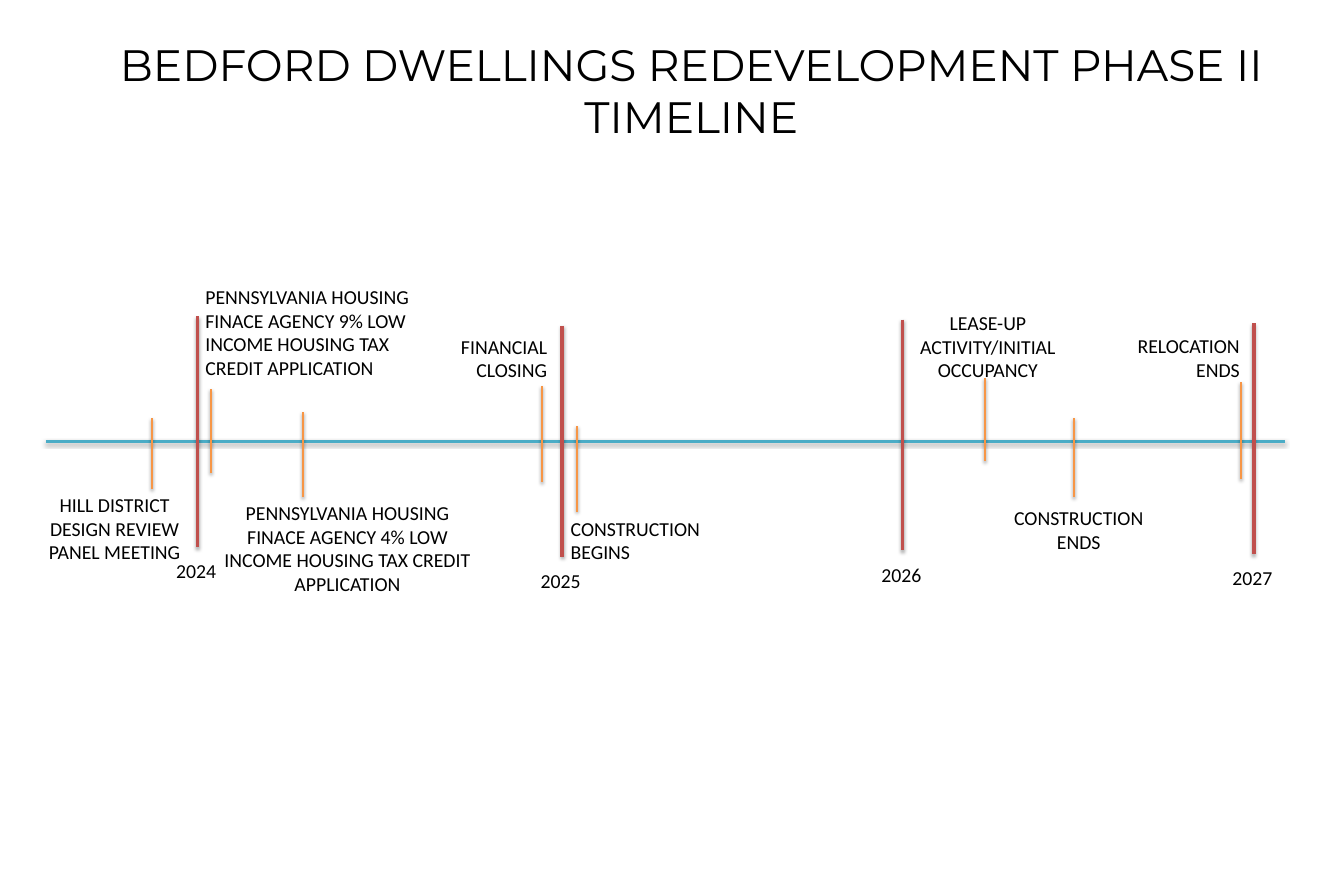
from lxml.etree import SubElement
from pptx import Presentation
from pptx.dml.color import RGBColor
from pptx.enum.shapes import MSO_CONNECTOR as Connector
from pptx.enum.text import MSO_ANCHOR as Anchor, MSO_AUTO_SIZE as AutoSize, PP_ALIGN as Align
from pptx.oxml.ns import qn
from pptx.util import Emu, Pt

PX = 9144
SLIDE_SIZE = (1700, 1100)
COLORS = {"axis": "4BACC6", "event": "F79646", "year": "C0504D",
          "text": "000000", "paper": "FFFFFF"}
LINE_STYLES = {
    "axis": {"width": 3, "opacity": 35, "distance": 1.8},
    "year": {"width": 3, "opacity": 35, "distance": 1.8},
    "event": {"width": 2, "opacity": 38, "distance": 1.6},
}
TITLE = "BEDFORD DWELLINGS REDEVELOPMENT PHASE II TIMELINE"
TITLE_BOX = (83, 42, 1583, 145)
AXIS = (58, 1625, 558)
YEAR_MARK_HEIGHT = 292
YEAR_LABEL_SIZE = (75, 40)
YEAR_LABEL_GAP = 10
YEARS = [("2024", 250, 400), ("2025", 711, 412), ("2026", 1142, 404), ("2027", 1586, 409)]
EVENTS = [
    ("HILL DISTRICT DESIGN REVIEW PANEL MEETING",
     (192, 529, 618), (50, 618, 190, 101), Align.CENTER),
    ("PENNSYLVANIA HOUSING FINACE AGENCY 9% LOW INCOME HOUSING TAX CREDIT APPLICATION",
     (267, 492, 598), (250, 355, 330, 131), Align.LEFT),
    ("PENNSYLVANIA HOUSING FINACE AGENCY 4% LOW INCOME HOUSING TAX CREDIT APPLICATION",
     (383, 521, 629), (265, 628, 349, 131), Align.CENTER),
    ("FINANCIAL CLOSING", (686, 488, 610), (524, 418, 178, 71), Align.RIGHT),
    ("CONSTRUCTION BEGINS", (730, 539, 647), (712, 648, 203, 71), Align.LEFT),
    ("LEASE-UP ACTIVITY/INITIAL OCCUPANCY",
     (1246, 478, 583), (1150, 388, 199, 101), Align.CENTER),
    ("CONSTRUCTION ENDS", (1358, 529, 629), (1271, 635, 187, 71), Align.CENTER),
    ("RELOCATION ENDS", (1570, 483, 606), (1379, 417, 199, 71), Align.RIGHT),
]


def emu(lengths):
    return [Emu(length * PX) for length in lengths]


def write(holder, text, font_name, size, align):
    frame = holder.text_frame
    frame_format = {"text": text, "word_wrap": True, "vertical_anchor": Anchor.TOP,
                    "auto_size": AutoSize.SHAPE_TO_FIT_TEXT}
    for key, value in frame_format.items():
        setattr(frame, key, value)
    paragraph = frame.paragraphs[0]
    paragraph.alignment = align
    font = paragraph.runs[0].font
    for key, value in {"name": font_name, "size": Pt(size)}.items():
        setattr(font, key, value)
    font.color.rgb = RGBColor.from_string(COLORS["text"])


def draw_line(slide, role, ends):
    style = LINE_STYLES[role]
    line = slide.shapes.add_connector(Connector.STRAIGHT, *emu(ends))
    line.line.color.rgb = RGBColor.from_string(COLORS[role])
    line.line.width = Pt(style["width"])
    effects = SubElement(line._element.spPr, qn("a:effectLst"))
    shadow = SubElement(effects, qn("a:outerShdw"), blurRad=str(Pt(3.1)),
                        dist=str(Pt(style["distance"])), dir="5400000", rotWithShape="0")
    shade = SubElement(shadow, qn("a:srgbClr"), val=COLORS["text"])
    SubElement(shade, qn("a:alpha"), val=str(style["opacity"] * 1000))


def add_label(slide, text, box, align):
    write(slide.shapes.add_textbox(*emu(box)), text, "Calibri", 18, align)


def main():
    deck = Presentation()
    deck.slide_width, deck.slide_height = emu(SLIDE_SIZE)
    slide = deck.slides.add_slide(deck.slide_layouts[5])

    title = slide.shapes.title
    for key, value in zip(("left", "top", "width", "height"), emu(TITLE_BOX)):
        setattr(title, key, value)
    title.fill.solid()
    title.fill.fore_color.rgb = RGBColor.from_string(COLORS["paper"])
    write(title, TITLE, "Montserrat", 40, Align.CENTER)

    start, end, axis_y = AXIS
    draw_line(slide, "axis", (start, axis_y, end, axis_y))
    for text, (x, top, bottom), box, align in EVENTS:
        draw_line(slide, "event", (x, top, x, bottom))
        add_label(slide, text, box, align)
    label_width, label_height = YEAR_LABEL_SIZE
    for year, x, top in YEARS:
        bottom = top + YEAR_MARK_HEIGHT
        draw_line(slide, "year", (x, top, x, bottom))
        label_box = (x - label_width // 2, bottom + YEAR_LABEL_GAP, label_width, label_height)
        add_label(slide, year, label_box, Align.LEFT)

    deck.save("out.pptx")


if __name__ == "__main__":
    main()
